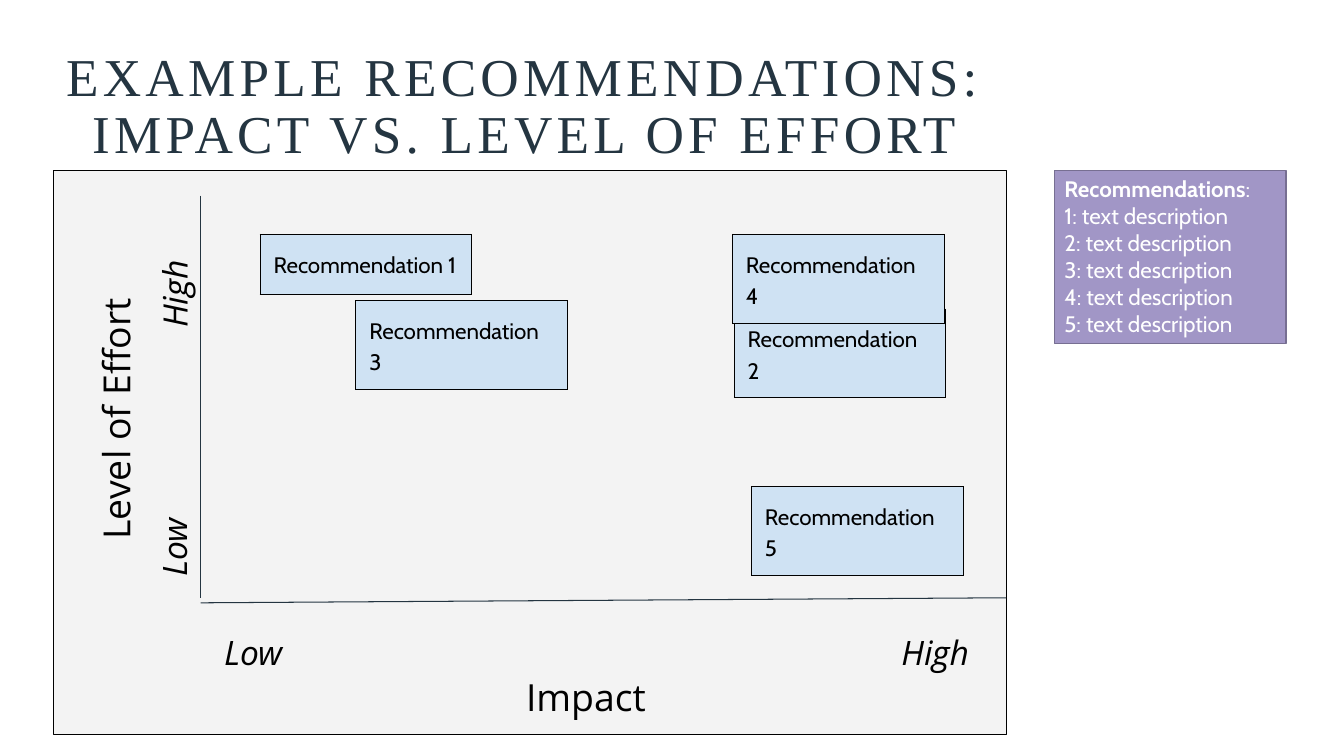
from dataclasses import dataclass
from typing import Any

from lxml.etree import SubElement
from pptx import Presentation
from pptx.dml.color import RGBColor
from pptx.enum.shapes import MSO_CONNECTOR as CONN, MSO_SHAPE as SHAPE
from pptx.enum.text import MSO_ANCHOR as ANCHOR, MSO_AUTO_SIZE as AUTO, PP_ALIGN as ALIGN
from pptx.oxml.ns import qn
from pptx.util import Pt

BLACK = RGBColor(0x00, 0x00, 0x00)
WHITE = RGBColor(0xFF, 0xFF, 0xFF)
NAVY = RGBColor(0x24, 0x35, 0x41)
PANEL = RGBColor(0xF3, 0xF3, 0xF3)
BLUE = RGBColor(0xCF, 0xE2, 0xF3)
PURPLE = RGBColor(0xA1, 0x96, 0xC6)
PLUM = RGBColor(0x77, 0x6F, 0x92)

INSET = 9.6
CARD_W, CARD_H = 151.2, 43.2
LABEL_H = 39.6

TITLE = {"name": "Times New Roman", "size": Pt(38), "bold": False}
AXIS = {"name": "Open Sans", "size": Pt(26.7)}
SCALE = {"name": "Open Sans", "size": Pt(24), "italic": True}
CARD = {"name": "Cabin", "size": Pt(16), "bold": False}
HEAD = {**CARD, "bold": True}


@dataclass(frozen=True)
class Label:
    text: str
    left: float
    top: float
    width: float
    font: dict[str, Any]
    align: ALIGN = ALIGN.LEFT
    rotation: int = 0


@dataclass(frozen=True)
class Card:
    number: int
    left: float
    top: float


@dataclass(frozen=True)
class Axis:
    x1: float
    y1: float
    x2: float
    y2: float


AXES = [Axis(143.3, 139.7, 143.3, 427), Axis(718.6, 427, 143.3, 430.6)]
LABELS = [
    Label("Level of Effort", -46.8, 279.4, 247, AXIS, ALIGN.CENTER, 270),
    Label("High", 634.3, 442.1, 76.3, SCALE),
    Label("Low", 82.8, 364.3, 74.2, SCALE, rotation=270),
    Label("Impact", 224.6, 471.6, 388.1, AXIS, ALIGN.CENTER),
    Label("High", 82.1, 185.8, 76.3, SCALE, rotation=270),
    Label("Low", 150.5, 442.1, 74.2, SCALE),
]
CARDS = [
    Card(1, 185.8, 167.4),
    Card(2, 524.5, 220.7),
    Card(3, 254.2, 214.6),
    Card(4, 523.2, 167.4),
    Card(5, 536.8, 347.6),
]


def place(sp, left: float, top: float, width: float, height: float) -> None:
    box = {"left": left, "top": top, "width": width, "height": height}
    for name, value in box.items():
        setattr(sp, name, Pt(value))


def add_run(p, text: str, font: dict[str, Any], color: RGBColor):
    r = p.add_run()
    r.text = text
    for name, value in font.items():
        setattr(r.font, name, value)
    r.font.color.rgb = color
    return r


def paint(sp, fill: RGBColor, line: RGBColor, width: float) -> None:
    sp.fill.solid()
    sp.fill.fore_color.rgb = fill
    sp.line.color.rgb = line
    sp.line.width = Pt(width)


def set_insets(target) -> None:
    for side in ("left", "top", "right", "bottom"):
        setattr(target, f"margin_{side}", Pt(INSET))


def fill_title(sp) -> None:
    place(sp, 38.2, 17.3, 672.5, 104.4)
    tf = sp.text_frame
    tf.auto_size = AUTO.NONE
    tf.vertical_anchor = ANCHOR.BOTTOM
    p = tf.paragraphs[0]
    p.alignment = ALIGN.CENTER
    p.line_spacing = 0.9
    r = add_run(p, "EXAMPLE RECOMMENDATIONS: IMPACT VS. LEVEL OF EFFORT", TITLE, NAVY)
    r.font._element.set("spc", "300")


def fill_legend(sp) -> None:
    place(sp, 753.1, 121.7, 165.6, 123.8)
    paint(sp, PURPLE, PLUM, 1)
    tf = sp.text_frame
    tf.auto_size = AUTO.NONE
    tf.vertical_anchor = ANCHOR.TOP
    lines = [[("Recommendations", HEAD), (":", CARD)]]
    lines += [[(f"{card.number}: text description", CARD)] for card in CARDS]
    for i, runs in enumerate(lines):
        p = tf.add_paragraph() if i else tf.paragraphs[0]
        p.space_before = Pt(0)
        pPr = p._p.get_or_add_pPr()
        for name in ("marL", "indent"):
            pPr.set(name, "0")
        SubElement(pPr, qn("a:buNone"))
        for text, font in runs:
            add_run(p, text, font, WHITE)


def add_panel(shapes) -> None:
    sp = shapes.add_shape(SHAPE.RECTANGLE, Pt(38.2), Pt(121.7), Pt(681.1), Pt(403.2))
    sp.shadow.inherit = False
    paint(sp, PANEL, BLACK, 0.75)


def add_axis(shapes, axis: Axis) -> None:
    ends = [Pt(v) for v in (axis.x1, axis.y1, axis.x2, axis.y2)]
    line = shapes.add_connector(CONN.STRAIGHT, *ends)
    line.line.color.rgb = NAVY
    line.line.width = Pt(0.75)
    SubElement(line._element.spPr, qn("a:effectLst"))


def add_label(shapes, label: Label) -> None:
    sp = shapes.add_textbox(Pt(label.left), Pt(label.top), Pt(label.width), Pt(LABEL_H))
    sp.rotation = label.rotation
    tf = sp.text_frame
    tf.word_wrap = True
    set_insets(tf)
    p = tf.paragraphs[0]
    p.alignment = label.align
    add_run(p, label.text, label.font, BLACK)


def add_borders(cell) -> None:
    tcPr = cell._tc.get_or_add_tcPr()
    for i, side in enumerate(("lnL", "lnR", "lnT", "lnB")):
        ln = tcPr.makeelement(qn(f"a:{side}"), {"w": str(Pt(0.75))})
        SubElement(SubElement(ln, qn("a:solidFill")), qn("a:srgbClr"), val=str(BLACK))
        tcPr.insert(i, ln)


def add_card(shapes, card: Card) -> None:
    frame = shapes.add_table(1, 1, Pt(card.left), Pt(card.top), Pt(CARD_W), Pt(CARD_H))
    table = frame.table
    table.first_row = table.horz_banding = False
    cell = table.cell(0, 0)
    set_insets(cell)
    cell.fill.solid()
    cell.fill.fore_color.rgb = BLUE
    add_borders(cell)
    p = cell.text_frame.paragraphs[0]
    p.line_spacing = 1.15
    add_run(p, f"Recommendation {card.number}", CARD, BLACK)


def main() -> None:
    prs = Presentation()
    prs.slide_width, prs.slide_height = Pt(960), Pt(540)
    slide = prs.slides.add_slide(prs.slide_layouts[1])
    fill_title(slide.shapes.title)
    fill_legend(slide.placeholders[1])
    add_panel(slide.shapes)
    for axis in AXES:
        add_axis(slide.shapes, axis)
    for label in LABELS:
        add_label(slide.shapes, label)
    for card in CARDS:
        add_card(slide.shapes, card)
    prs.save("out.pptx")


if __name__ == "__main__":
    main()
